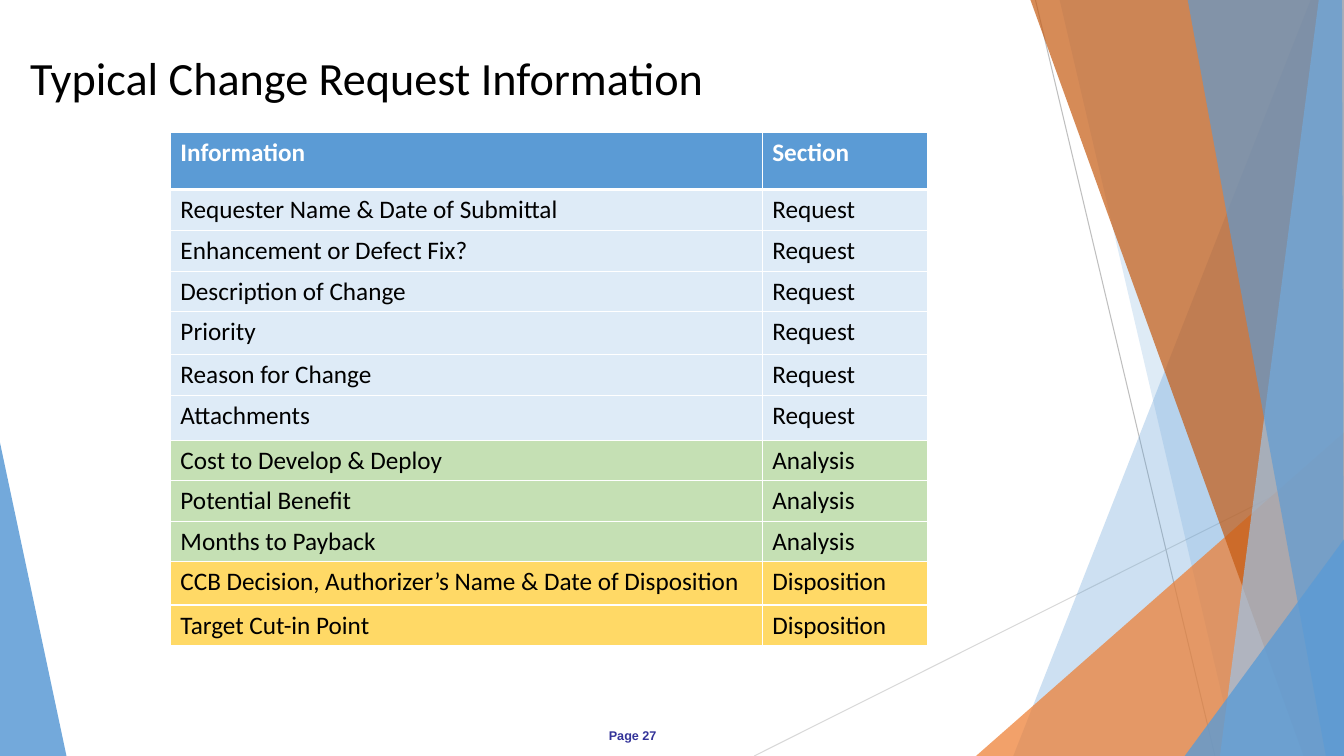
from lxml import etree
from pptx import Presentation
from pptx.dml.color import RGBColor
from pptx.enum.shapes import MSO_CONNECTOR
from pptx.enum.text import MSO_ANCHOR, MSO_AUTO_SIZE, PP_ALIGN
from pptx.oxml.ns import qn
from pptx.util import Inches, Pt

STRAIGHT = MSO_CONNECTOR.STRAIGHT
MIDDLE = MSO_ANCHOR.MIDDLE
NO_AUTOFIT = MSO_AUTO_SIZE.NONE
FIT_SHAPE = MSO_AUTO_SIZE.SHAPE_TO_FIT_TEXT
LEFT = PP_ALIGN.LEFT

WHITE = RGBColor(0xFF, 0xFF, 0xFF)
BLACK = RGBColor(0, 0, 0)
BLUE = RGBColor(0x5B, 0x9B, 0xD5)
SKY = RGBColor(0x9D, 0xC3, 0xE6)
PALE_BLUE = RGBColor(0xDE, 0xEB, 0xF7)
ORANGE = RGBColor(0xED, 0x7D, 0x31)
RUST = RGBColor(0xC5, 0x5A, 0x11)
GREEN = RGBColor(0xC5, 0xE0, 0xB4)
GOLD = RGBColor(0xFF, 0xD9, 0x66)
NAVY = RGBColor(0x33, 0x33, 0x99)
LIGHT_GRAY = RGBColor(0xD9, 0xD9, 0xD9)
GRAY = RGBColor(0xBF, 0xBF, 0xBF)

WIDTH, HEIGHT = 13.33, 7.5

RAYS = [
    ((7.48, HEIGHT), (WIDTH, 4.57), LIGHT_GRAY),
    ((10.27, 0), (12.05, HEIGHT), GRAY),
]
SHARDS = [
    ([(0, 4.39), (0.66, HEIGHT), (0, HEIGHT)], BLUE, 85),
    ([(13, 0), (10.05, HEIGHT), (WIDTH, HEIGHT), (WIDTH, 0)], BLUE, 30),
    ([(10.51, 0), (12.26, HEIGHT), (WIDTH, HEIGHT), (WIDTH, 0)], BLUE, 20),
    ([(9.68, HEIGHT), (WIDTH, 4.29), (WIDTH, HEIGHT)], ORANGE, 72),
    ([(10.22, 0), (12.93, HEIGHT), (WIDTH, HEIGHT), (WIDTH, 0)], RUST, 70),
    ([(13.08, 0), (12.1, HEIGHT), (WIDTH, HEIGHT), (WIDTH, 0)], SKY, 70),
    ([(11.78, 0), (13.15, HEIGHT), (WIDTH, HEIGHT), (13.31, 0)], BLUE, 65),
    ([(11.75, HEIGHT), (WIDTH, 5.35), (WIDTH, HEIGHT)], BLUE, 80),
]

SECTION_FILLS = {
    "Section": BLUE,
    "Request": PALE_BLUE,
    "Analysis": GREEN,
    "Disposition": GOLD,
}
COLUMN_WIDTHS = [5.87, 1.64]
ROWS = [
    ("Information", "Section", 0.57),
    ("Requester Name & Date of Submittal", "Request", 0.41),
    ("Enhancement or Defect Fix?", "Request", 0.4),
    ("Description of Change", "Request", 0.37),
    ("Priority", "Request", 0.43),
    ("Reason for Change", "Request", 0.37),
    ("Attachments", "Request", 0.45),
    ("Cost to Develop & Deploy", "Analysis", 0.4),
    ("Potential Benefit", "Analysis", 0.4),
    ("Months to Payback", "Analysis", 0.4),
    ("CCB Decision, Authorizer’s Name & Date of Disposition", "Disposition", 0.43),
    ("Target Cut-in Point", "Disposition", 0.4),
]


def add_run(para, text, size, color, font="Calibri", bold=False):
    span = para.add_run()
    span.text = text
    span.font.name = font
    span.font.size = Pt(size)
    span.font.bold = bold
    span.font.color.rgb = color


def add_ray(page, start, end, color):
    ends = [Inches(value) for value in start + end]
    ray = page.shapes.add_connector(STRAIGHT, *ends)
    ray.line.color.rgb = color
    ray.line.width = Pt(0.75)
    etree.SubElement(ray._element.spPr, qn("a:effectLst"))


def add_shard(page, corners, color, opacity):
    points = [(Inches(x), Inches(y)) for x, y in corners]
    builder = page.shapes.build_freeform(*points[0])
    builder.add_line_segments(points[1:], close=True)
    shard = builder.convert_to_shape()
    shard.shadow.inherit = False
    shard.line.fill.background()
    shard.fill.solid()
    shard.fill.fore_color.rgb = color
    tint = shard._element.spPr.find(qn("a:solidFill"))[0]
    etree.SubElement(tint, qn("a:alpha"), val=str(opacity * 1000))


def add_title(page, text):
    title = page.shapes.title
    title.left, title.top = Inches(0.2), Inches(0.07)
    title.width, title.height = Inches(11.5), Inches(1.45)
    frame = title.text_frame
    frame.auto_size = NO_AUTOFIT
    frame.vertical_anchor = MIDDLE
    para = frame.paragraphs[0]
    para.alignment = LEFT
    para.line_spacing = 0.9
    add_run(para, text, 33, BLACK)


def add_page_label(page, text):
    box = page.shapes.add_textbox(Inches(5.94), Inches(7.17), Inches(0.69), Inches(0.25))
    frame = box.text_frame
    frame.word_wrap = False
    frame.auto_size = FIT_SHAPE
    add_run(frame.paragraphs[0], text, 9, NAVY, "Arial", True)


def set_border(cell, side, width):
    border = etree.SubElement(cell._tc.get_or_add_tcPr(), qn(f"a:ln{side}"), w=str(Pt(width)))
    fill = etree.SubElement(border, qn("a:solidFill"))
    etree.SubElement(fill, qn("a:srgbClr"), val=str(WHITE))


def fill_cell(cell, text, fill, row_index):
    is_header = row_index == 0
    widths = {"L": 1, "R": 1, "T": 3 if row_index == 1 else 1, "B": 3 if is_header else 1}
    for side, width in widths.items():
        set_border(cell, side, width)
    cell.fill.solid()
    cell.fill.fore_color.rgb = fill
    color = WHITE if is_header else BLACK
    add_run(cell.text_frame.paragraphs[0], text, 18, color, bold=is_header)


def add_request_table(page):
    total_height = sum(height for _, _, height in ROWS)
    frame = page.shapes.add_table(
        len(ROWS), len(COLUMN_WIDTHS), Inches(1.69), Inches(1.31),
        Inches(sum(COLUMN_WIDTHS)), Inches(total_height))
    table = frame.table
    for column, width in zip(table.columns, COLUMN_WIDTHS):
        column.width = Inches(width)
    for row_index, (information, section, height) in enumerate(ROWS):
        table.rows[row_index].height = Inches(height)
        for column_index, text in enumerate((information, section)):
            cell = table.cell(row_index, column_index)
            fill_cell(cell, text, SECTION_FILLS[section], row_index)


def main():
    deck = Presentation()
    deck.slide_width, deck.slide_height = Inches(WIDTH), Inches(HEIGHT)
    page = deck.slides.add_slide(deck.slide_layouts[5])
    add_shard(page, *SHARDS[0])
    for ray in RAYS:
        add_ray(page, *ray)
    for shard in SHARDS[1:]:
        add_shard(page, *shard)
    add_page_label(page, "Page 27")
    add_title(page, "Typical Change Request Information")
    add_request_table(page)
    deck.save("out.pptx")


if __name__ == "__main__":
    main()
